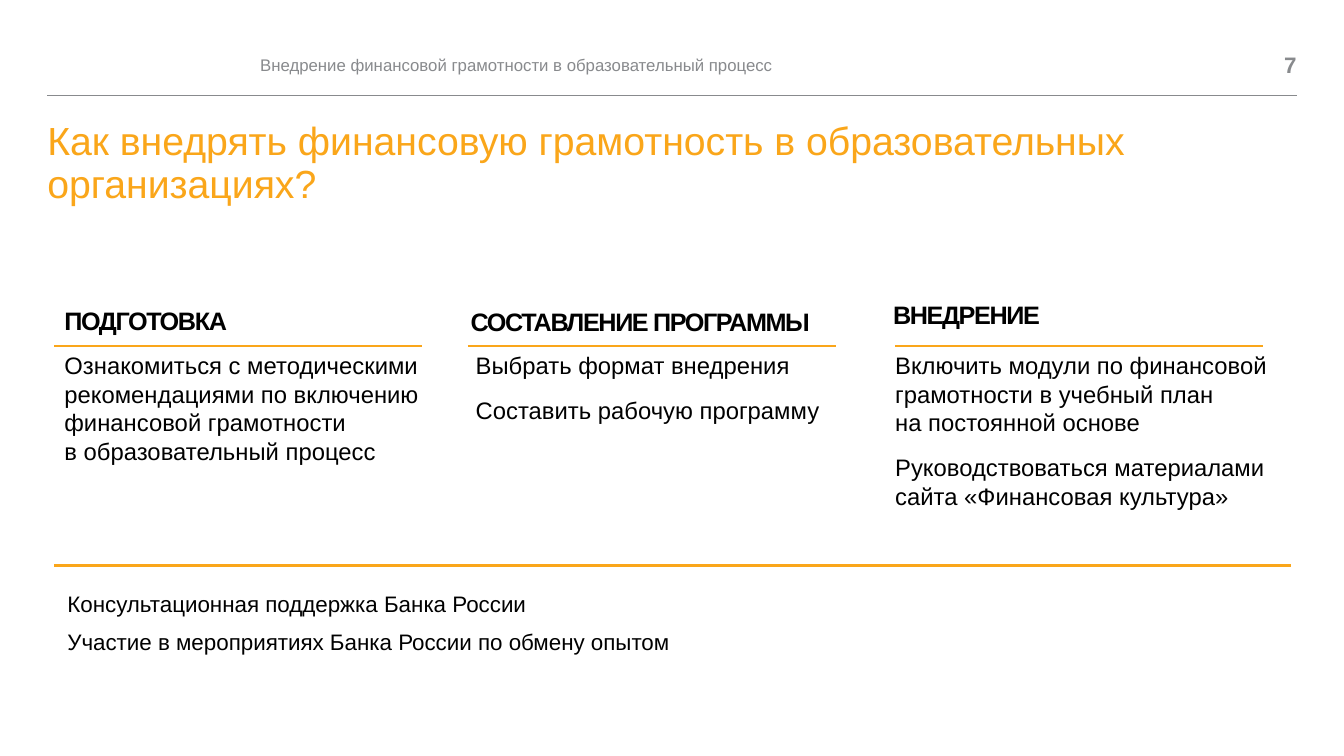
"""Builds a slide on introducing financial literacy in schools."""
from lxml import etree
from pptx import Presentation
from pptx.dml.color import RGBColor
from pptx.enum import shapes, text
from pptx.oxml import ns
from pptx.util import Inches, Pt

ORANGE = RGBColor(0xFA, 0xA6, 0x1A)
GREY = RGBColor(0x88, 0x8A, 0x8D)
BLACK = RGBColor(0, 0, 0)

TITLE = "Как внедрять финансовую грамотность в образовательных организациях?"
RUNNING_HEAD = "Внедрение финансовой грамотности в образовательный процесс"
PAGE_NUMBER = "7"
STAGES = [
    dict(heading="ПОДГОТОВКА", heading_at=(0.54, 2.98, 1.82, 0.4), wrap=False,
         steps=["Ознакомиться с методическими рекомендациями по включению "
                "финансовой грамотности\nв образовательный процесс"],
         steps_at=(0.54, 3.43, 4.01, 1.25), indent=0, rule_left=0.54),
    dict(heading="СОСТАВЛЕНИЕ ПРОГРАММЫ", heading_at=(4.57, 2.99, 4.19, 0.4), wrap=True,
         steps=["Выбрать формат внедрения", "Составить рабочую программу"],
         steps_at=(4.46, 3.43, 3.83, 0.84), indent=0.16, rule_left=4.64),
    dict(heading="ВНЕДРЕНИЕ", heading_at=(8.76, 2.92, 1.66, 0.4), wrap=False,
         steps=["Включить модули по финансовой грамотности в учебный план\nна постоянной основе",
                "Руководствоваться материалами сайта «Финансовая культура»"],
         steps_at=(8.78, 3.43, 4.01, 1.7), indent=0, rule_left=8.88),
]
SUPPORT = ["Консультационная поддержка Банка России",
           "Участие в мероприятиях Банка России по обмену опытом"]
RULE_TOP, RULE_WIDTH = 3.43, 3.65
SUPPORT_TOP, SUPPORT_STEP = 5.81, 0.37


def add_text(page, place, paragraphs, size, color=BLACK, bold=False, align=text.PP_ALIGN.LEFT,
             inset=True, middle=False, wrap=True, after=0, indent=0, line_spacing=1.0, tracking=0):
    box = page.shapes.add_textbox(*map(Inches, place))
    frame = box.text_frame
    frame.word_wrap = wrap
    if middle:
        frame.vertical_anchor = text.MSO_ANCHOR.MIDDLE
    if not inset:
        frame.margin_left = frame.margin_right = frame.margin_top = frame.margin_bottom = 0
    for number, words in enumerate(paragraphs):
        para = frame.add_paragraph() if number else frame.paragraphs[0]
        para.text = words
        para.alignment = align
        para.space_after = Pt(after)
        para.line_spacing = line_spacing
        if indent:
            para._p.get_or_add_pPr().set("marL", str(Inches(indent)))
        for span in para.runs:
            span.font.name = "Arial"
            span.font.size = Pt(size)
            span.font.bold = bold
            span.font.color.rgb = color
            if tracking:
                span._r.get_or_add_rPr().set("spc", str(tracking * 100))


def add_rule(page, left, right, top, color=ORANGE, width=1.5):
    rule = page.shapes.add_connector(shapes.MSO_CONNECTOR.STRAIGHT, Inches(left), Inches(top),
                                     Inches(right), Inches(top))
    rule.line.color.rgb = color
    rule.line.width = Pt(width)
    etree.SubElement(rule._element.spPr, ns.qn("a:effectLst"))


def main():
    deck = Presentation()
    deck.slide_width, deck.slide_height = Inches(13.33), Inches(7.5)
    page = deck.slides.add_slide(deck.slide_layouts[6])

    add_rule(page, 0.47, 12.86, 0.95, GREY, 0.5)
    add_text(page, (0.47, 1.21, 12.39, 0.87), [TITLE], 28, ORANGE, inset=False, line_spacing=0.9)
    add_text(page, (2.58, 0.47, 9.23, 0.35), [RUNNING_HEAD], 12, GREY, inset=False, middle=True)
    add_text(page, (12.05, 0.47, 0.81, 0.35), [PAGE_NUMBER], 16, GREY, bold=True,
             align=text.PP_ALIGN.RIGHT, inset=False, middle=True)

    for stage in STAGES:
        add_text(page, stage["heading_at"], [stage["heading"]], 18, bold=True,
                 wrap=stage["wrap"], tracking=-1)
        add_text(page, stage["steps_at"], stage["steps"], 17, after=12, indent=stage["indent"])
        add_rule(page, stage["rule_left"], stage["rule_left"] + RULE_WIDTH, RULE_TOP)

    add_rule(page, 0.54, 12.8, 5.61)
    for row, line in enumerate(SUPPORT):
        add_text(page, (0.57, SUPPORT_TOP + row * SUPPORT_STEP, 7.77, SUPPORT_STEP), [line], 16)

    deck.save("out.pptx")


if __name__ == "__main__":
    main()
